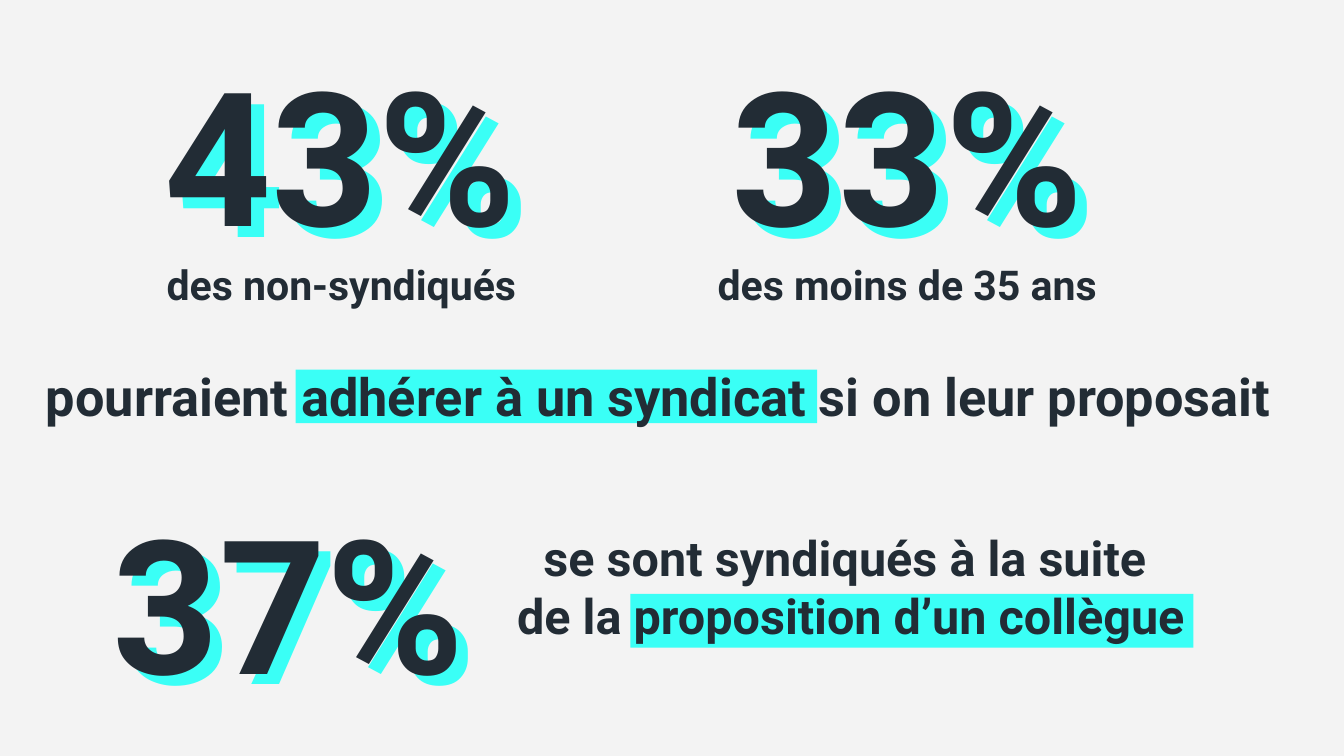
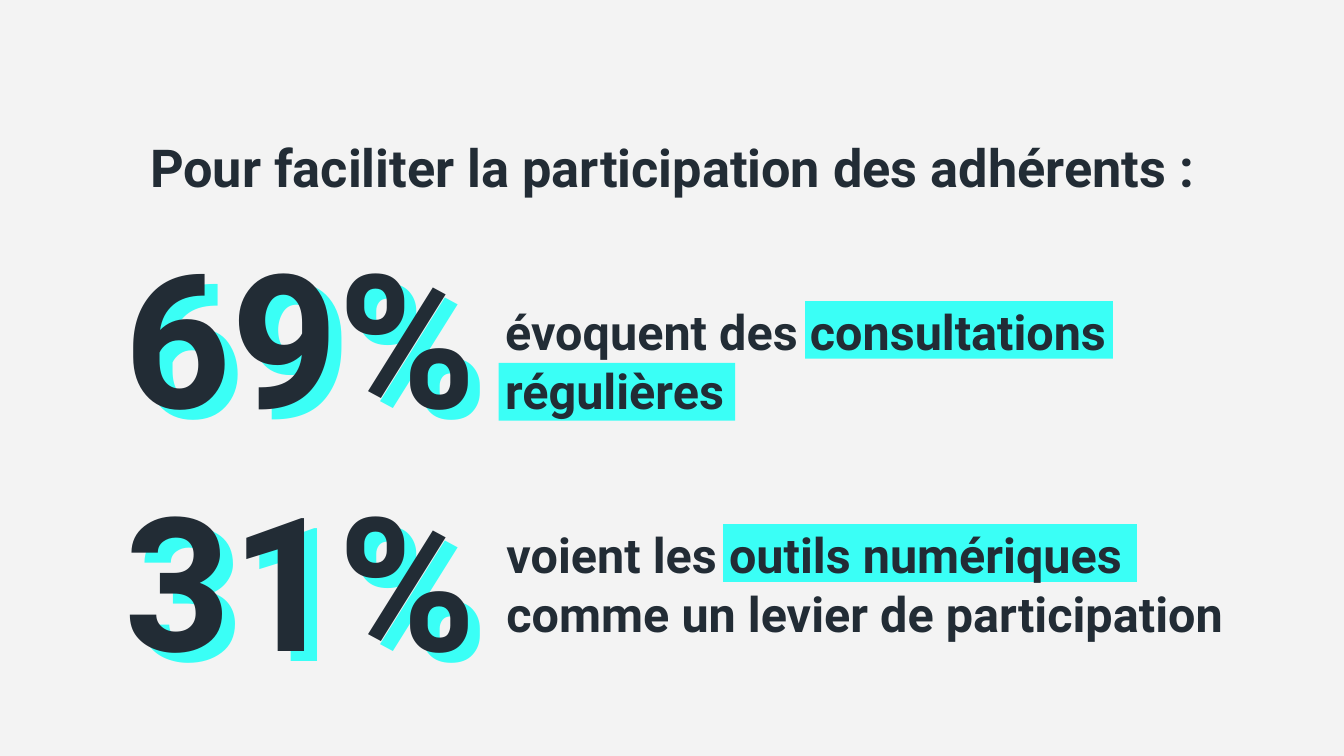
from lxml.etree import SubElement
from pptx import Presentation
from pptx.dml.color import RGBColor
from pptx.enum.shapes import MSO_SHAPE as Preset
from pptx.enum.text import MSO_ANCHOR as Anchor, PP_ALIGN as Align
from pptx.oxml.ns import qn
from pptx.util import Inches, Pt

PAPER = "F3F3F3"
INK = "222C35"
CYAN = "3AFFF6"
FONT = "Roboto"
INSET = Inches(0.1)
FIGURE_SIZE, HEADLINE_SIZE, STATEMENT_SIZE, CAPTION_SIZE = 100, 28, 26, 22
FIGURE_HEIGHT = 1.63
CAPTION_HEIGHT = 0.62


def color(hex_code):
    return RGBColor.from_string(hex_code)


def add_page(deck):
    page = deck.slides.add_slide(deck.slide_layouts[6])
    page.background.fill.solid()
    page.background.fill.fore_color.rgb = color(PAPER)
    return page


def add_words(page, box, lines, size, align=Align.CENTER):
    words = page.shapes.add_textbox(*map(Inches, box))
    frame = words.text_frame
    frame.word_wrap = True
    frame.vertical_anchor = Anchor.TOP
    frame.margin_left = frame.margin_right = INSET
    frame.margin_top = frame.margin_bottom = INSET
    frame.text = "\n".join(lines)
    for paragraph in frame.paragraphs:
        paragraph.alignment = align
        paragraph.font.name = FONT
        paragraph.font.size = Pt(size)
        paragraph.font.bold = True
        paragraph.font.color.rgb = color(INK)
    return words


def add_cyan_shadow(words):
    effects = SubElement(words._element.spPr, qn("a:effectLst"))
    shadow = SubElement(effects, qn("a:outerShdw"), dist=str(Inches(0.12)),
                        dir=str(39 * 60000), algn="bl", rotWithShape="0")
    SubElement(shadow, qn("a:srgbClr"), val=CYAN)


def add_figure(page, left, top, width, value):
    figure = add_words(page, (left, top, width, FIGURE_HEIGHT), [value], FIGURE_SIZE)
    add_cyan_shadow(figure)


def add_captioned_figure(page, box, value, caption, caption_left, caption_width):
    left, top, width = box
    add_figure(page, left, top, width, value)
    caption_box = (left + caption_left, top + FIGURE_HEIGHT, caption_width, CAPTION_HEIGHT)
    add_words(page, caption_box, [caption], CAPTION_SIZE)


def add_highlighted_words(page, box, lines, size, highlights, align=Align.CENTER):
    left, top = box[:2]
    for dx, dy, width, height in highlights:
        marker = page.shapes.add_shape(
            Preset.RECTANGLE, *map(Inches, (left + dx, top + dy, width, height)))
        marker.shadow.inherit = False
        marker.fill.solid()
        marker.fill.fore_color.rgb = color(CYAN)
        marker.line.fill.background()
    add_words(page, box, lines, size, align)


def build_proposal_page(deck):
    page = add_page(deck)
    add_captioned_figure(page, (1.12, 0.2, 2.83), "43%", "des non-syndiqués", -0.24, 3.32)
    add_captioned_figure(page, (5.27, 0.2, 2.96), "33%", "des moins de 35 ans", -0.31, 3.58)
    add_highlighted_words(
        page, (0.1, 2.61, 9.59, 0.5),
        ["pourraient adhérer à un syndicat si on leur proposait"],
        HEADLINE_SIZE, [(2.1, 0.14, 3.88, 0.4)])
    add_figure(page, 0.66, 3.53, 2.97, "37%")
    add_highlighted_words(
        page, (3.62, 3.83, 5.43, 0.95),
        ["se sont syndiqués à la suite ", "de la proposition d’un collègue"],
        STATEMENT_SIZE, [(1.07, 0.59, 4.19, 0.4)])


def build_participation_page(deck):
    page = add_page(deck)
    add_words(page, (0.23, 0.91, 9.54, 0.7),
              ["Pour faciliter la participation des adhérents :"], HEADLINE_SIZE)
    findings = [
        (1.55, "69%", (3.66, 2.15, 5.01, 0.7), "évoquent des consultations régulières",
         [(2.33, 0.09, 2.29, 0.43), (0.05, 0.55, 1.76, 0.43)]),
        (3.36, "31%", (3.67, 3.81, 6.04, 1.09),
         "voient les outils numériques comme un levier de participation",
         [(1.71, 0.09, 3.08, 0.43)]),
    ]
    for top, value, box, statement, highlights in findings:
        add_figure(page, 0.79, top, 2.89, value)
        add_highlighted_words(page, box, [statement], STATEMENT_SIZE, highlights, Align.LEFT)


def main():
    deck = Presentation()
    deck.slide_width = Inches(10)
    deck.slide_height = deck.slide_width * 9 // 16
    build_proposal_page(deck)
    build_participation_page(deck)
    deck.save("out.pptx")


if __name__ == "__main__":
    main()
